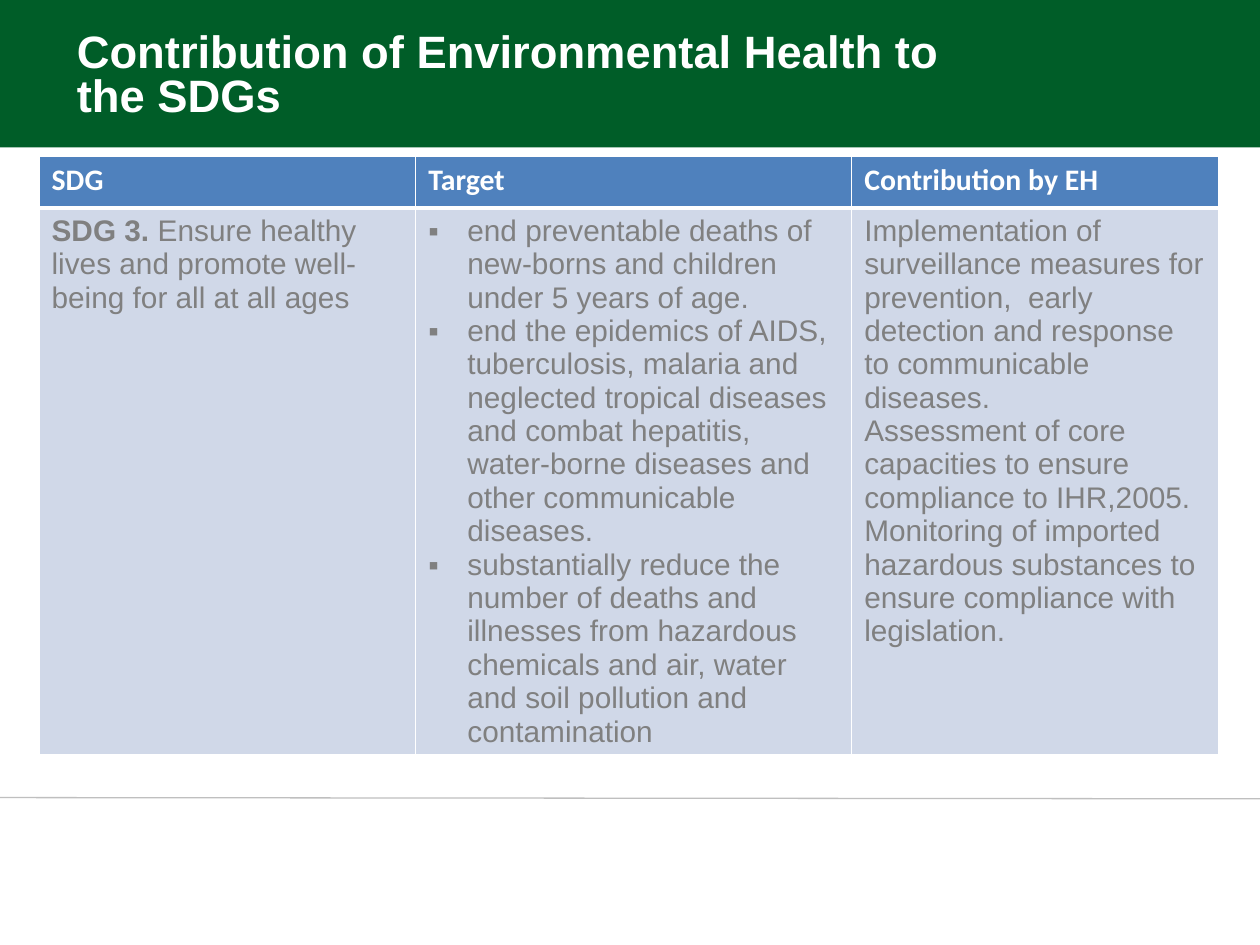
from lxml.etree import SubElement
from pptx import Presentation
from pptx.dml.color import RGBColor
from pptx.enum.shapes import MSO_CONNECTOR, MSO_SHAPE
from pptx.enum.text import MSO_ANCHOR, MSO_AUTO_SIZE, PP_ALIGN
from pptx.oxml.ns import qn
from pptx.util import Inches, Pt

COLORS = {"green": "005D28", "rule": "BFBFBF", "white": "FFFFFF",
          "header": "4F81BD", "body": "D0D8E8", "text": "808080"}

# Each cell is a list of paragraphs, each paragraph a list of (text, bold) runs.
HEADERS = ["SDG", "Target", "Contribution by EH"]
GOAL = [[("SDG 3. ", True),
         ("Ensure healthy lives and promote well-being for all at all ages", False)]]
TARGETS = [[(text, False)] for text in (
    "end preventable deaths of new-borns and children under 5 years of age.",
    "end the epidemics of AIDS, tuberculosis, malaria and neglected tropical diseases "
    "and combat hepatitis, water-borne diseases and other communicable diseases.",
    "substantially reduce the number of deaths and illnesses from hazardous chemicals "
    "and air, water and soil pollution and contamination",
)]
CONTRIBUTIONS = [[(text, False)] for text in (
    "Implementation of surveillance measures for prevention,  early detection and "
    "response to communicable diseases.",
    "Assessment of core capacities to ensure compliance to IHR,2005.",
    "Monitoring of imported hazardous substances to ensure compliance with legislation.",
)]


def rgb(name):
    return RGBColor.from_string(COLORS[name])


class SlideBuilder:
    """Holds the text style and the current slide."""

    font = "Arial"
    header_font = "Calibri"
    title_size = 25.9
    table_size = 17

    def __init__(self, slide):
        self.slide = slide

    def add_run(self, paragraph, text, size, color, bold=False, font=None):
        run = paragraph.add_run()
        run.text = text
        run.font.name = font or self.font
        run.font.size = Pt(size)
        run.font.bold = bold
        run.font.color.rgb = rgb(color)

    def add_band(self, height):
        band = self.slide.shapes.add_shape(
            MSO_SHAPE.RECTANGLE, 0, 0, Inches(10), Inches(height))
        band.shadow.inherit = False
        band.fill.solid()
        band.fill.fore_color.rgb = rgb("green")
        band.line.fill.background()
        self.slide.shapes.title.element.addprevious(band.element)

    def add_rule(self, start_y, end_y):
        rule = self.slide.shapes.add_connector(
            MSO_CONNECTOR.STRAIGHT, 0, Inches(start_y), Inches(10), Inches(end_y))
        rule.line.color.rgb = rgb("rule")
        rule.line.width = Pt(0.75)
        SubElement(rule.element.spPr, qn("a:effectLst"))

    def set_title(self, text, left, top, width, height):
        title = self.slide.shapes.title
        title.left, title.top = Inches(left), Inches(top)
        title.width, title.height = Inches(width), Inches(height)
        frame = title.text_frame
        frame.word_wrap = True
        frame.auto_size = MSO_AUTO_SIZE.NONE
        frame.vertical_anchor = MSO_ANCHOR.BOTTOM
        paragraph = frame.paragraphs[0]
        paragraph.alignment = PP_ALIGN.LEFT
        paragraph.line_spacing = 0.8
        self.add_run(paragraph, text, self.title_size, "white", bold=True)

    def add_table(self, left, top, widths, heights):
        table = self.slide.shapes.add_table(
            len(heights), len(widths), Inches(left), Inches(top),
            Inches(sum(widths)), Inches(sum(heights))).table
        table.horz_banding = False
        for column, width in zip(table.columns, widths):
            column.width = Inches(width)
        for row, height in zip(table.rows, heights):
            row.height = Inches(height)
        return table

    def style_cell(self, cell, fill, bottom_width=1):
        properties = cell._tc.get_or_add_tcPr()
        for side, width in (("L", 1), ("R", 1), ("T", 1), ("B", bottom_width)):
            border = SubElement(properties, qn(f"a:ln{side}"), w=str(Pt(width)))
            solid = SubElement(border, qn("a:solidFill"))
            SubElement(solid, qn("a:srgbClr"), val=COLORS["white"])
        cell.fill.solid()
        cell.fill.fore_color.rgb = rgb(fill)

    def add_bullet(self, paragraph):
        properties = paragraph._p.get_or_add_pPr()
        properties.set("marL", str(Inches(0.31)))
        properties.set("indent", str(Inches(-0.31)))
        SubElement(properties, qn("a:buFont"), typeface=self.font)
        SubElement(properties, qn("a:buChar"), char="▪")

    def fill_header(self, cell, text):
        self.style_cell(cell, "header", bottom_width=3)
        self.add_run(cell.text_frame.paragraphs[0], text, self.table_size,
                     "white", bold=True, font=self.header_font)

    def fill_body(self, cell, paragraphs, bulleted=False):
        self.style_cell(cell, "body")
        frame = cell.text_frame
        for index, runs in enumerate(paragraphs):
            paragraph = frame.add_paragraph() if index else frame.paragraphs[0]
            if bulleted:
                self.add_bullet(paragraph)
            for text, bold in runs:
                self.add_run(paragraph, text, self.table_size, "text", bold)


def main():
    presentation = Presentation()
    presentation.slide_width, presentation.slide_height = Inches(10), Inches(7.5)
    title_only = presentation.slide_layouts[5]
    builder = SlideBuilder(presentation.slides.add_slide(title_only))

    builder.add_band(1.17)
    builder.add_rule(6.33, 6.34)
    builder.set_title("Contribution of Environmental Health to the SDGs",
                      0.51, 0.13, 7.32, 0.88)

    table = builder.add_table(0.31, 1.24, widths=[2.99, 3.46, 2.91], heights=[0.41, 0.41])
    for column, text in enumerate(HEADERS):
        builder.fill_header(table.cell(0, column), text)
    builder.fill_body(table.cell(1, 0), GOAL)
    builder.fill_body(table.cell(1, 1), TARGETS, bulleted=True)
    builder.fill_body(table.cell(1, 2), CONTRIBUTIONS)

    presentation.save("out.pptx")


if __name__ == "__main__":
    main()
